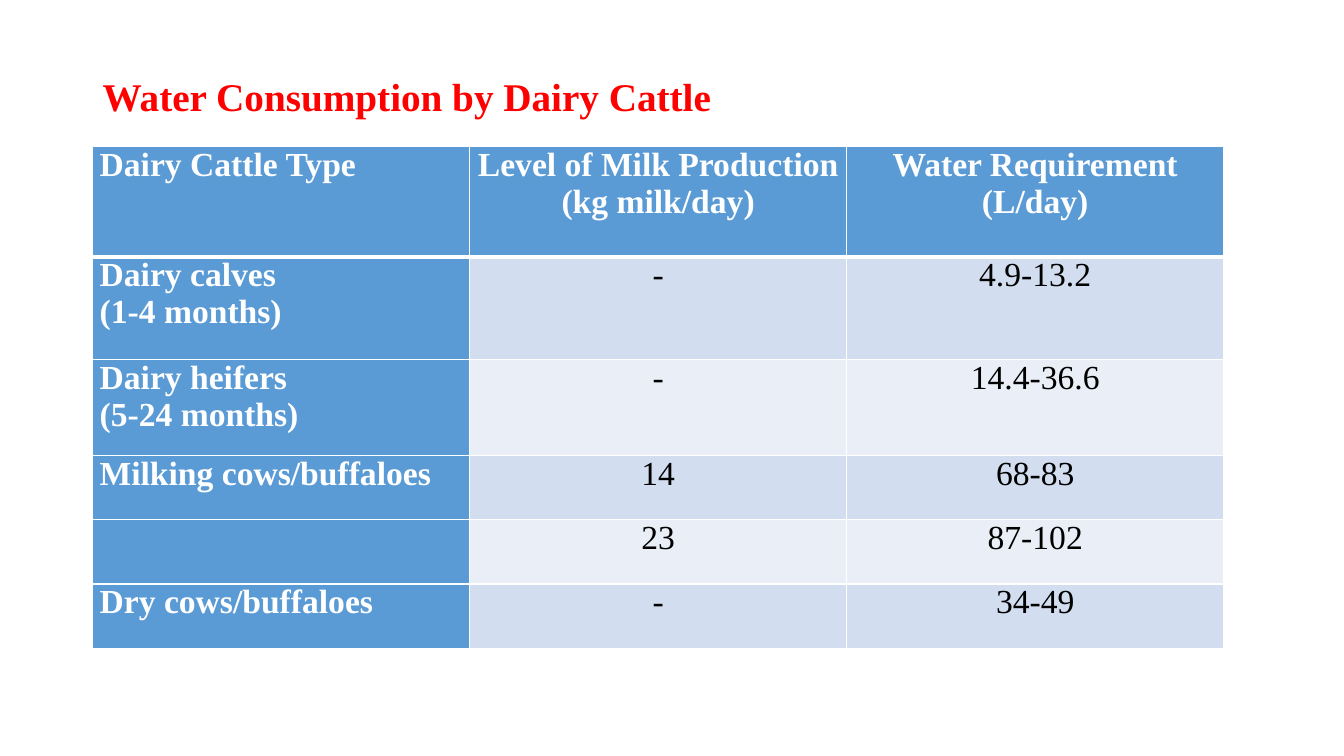
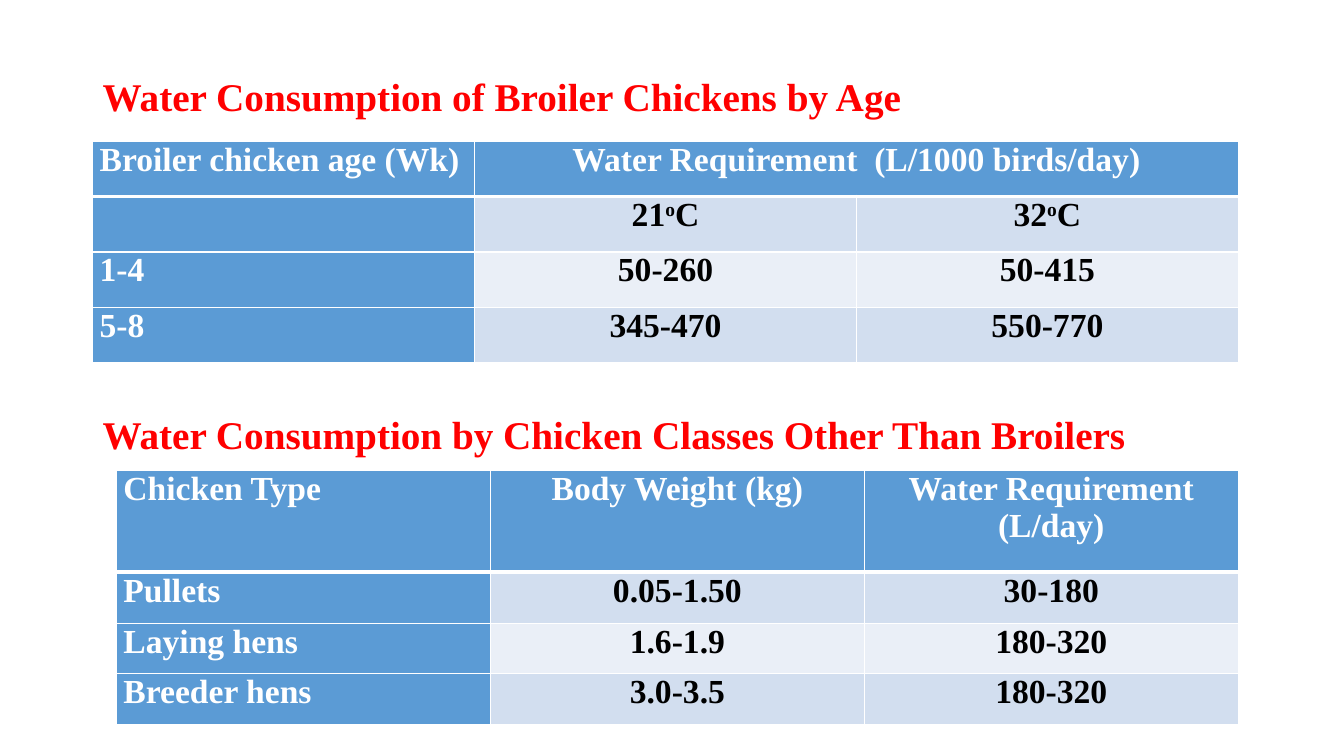
"""Build two slides of tables on the water needs of livestock."""
from dataclasses import dataclass

import lxml.etree
import pptx
import pptx.dml.color
import pptx.enum.text
import pptx.oxml.ns
import pptx.presentation
import pptx.slide
import pptx.text.text
import pptx.util

Pt = pptx.util.Pt
Align = pptx.enum.text.PP_ALIGN


@dataclass(frozen=True)
class Theme:
    """Colours, type and line sizes of the deck."""
    font: str = "Times New Roman"
    red: str = "FF0000"
    blue: str = "5B9BD5"
    bands: tuple[str, str] = ("D2DEEF", "EAEFF7")
    white: str = "FFFFFF"
    black: str = "000000"
    head: float = 28
    body: float = 24
    thin: float = 1
    thick: float = 3


@dataclass(frozen=True)
class Grid:
    """A table with a header row and a header column."""
    left: float
    top: float
    width: float
    heights: tuple[float, ...]
    rows: tuple[tuple[str, ...], ...]
    bold: bool = True
    merge: bool = False


@dataclass(frozen=True)
class Part:
    """A red heading with the table below it."""
    text: str
    top: float
    grid: Grid


THEME = Theme()
LEFT, WIDTH, TALL = 66.2, 869, 40

PAGES = (
    (
        Part("Water Consumption by Dairy Cattle", 48, Grid(
            66.2, 104.4, 269.3, (79, 73.2, 68.6, 46, 46, 46), (
                ("Dairy Cattle Type", "Level of Milk Production (kg milk/day)",
                 "Water Requirement\n(L/day)"),
                ("Dairy calves\n(1-4 months)", "-", "4.9-13.2"),
                ("Dairy heifers\n(5-24 months)", "-", "14.4-36.6"),
                ("Milking cows/buffaloes", "14", "68-83"),
                ("", "23", "87-102"),
                ("Dry cows/buffaloes", "-", "34-49"),
            ), bold=False)),
    ),
    (
        Part("Water Consumption of Broiler Chickens by Age", 48, Grid(
            66.2, 100.8, 272.8, (39.6,) * 4, (
                ("Broiler chicken age (Wk)", "Water Requirement  (L/1000 birds/day)", ""),
                ("", "21^o^C", "32^o^C"),
                ("1-4", "50-260", "50-415"),
                ("5-8", "345-470", "550-770"),
            ), merge=True)),
        Part("Water Consumption by Chicken Classes Other Than Broilers", 289.5, Grid(
            83.2, 336.2, 267.1, (72.6, 36.3, 36.3, 36.3), (
                ("Chicken Type", "Body Weight (kg)", "Water Requirement\n(L/day)"),
                ("Pullets", "0.05-1.50", "30-180"),
                ("Laying hens", "1.6-1.9", "180-320"),
                ("Breeder hens", "3.0-3.5", "180-320"),
            ))),
    ),
)


def shade(code: str) -> pptx.dml.color.RGBColor:
    """Turn a hex code into a colour."""
    return pptx.dml.color.RGBColor.from_string(code)


def write(frame: pptx.text.text.TextFrame, text: str, *, size: float, color: str,
          bold: bool, align: Align) -> None:
    """Write lines of text, raising what stands between carets."""
    frame.word_wrap = True
    for row, line in enumerate(text.split("\n")):
        para = frame.add_paragraph() if row else frame.paragraphs[0]
        para.alignment = align
        for spot, piece in enumerate(line.split("^")):
            if not piece:
                continue
            run = para.add_run()
            run.text = piece
            font = run.font
            font.name, font.size, font.bold = THEME.font, Pt(size), bold
            font.color.rgb = shade(color)
            if spot % 2:
                run._r.get_or_add_rPr().set("baseline", "30000")


def edge(cell: object, side: str, width: float) -> None:
    """Draw one white border of a cell."""
    name = pptx.oxml.ns.qn
    line = lxml.etree.SubElement(cell._tc.get_or_add_tcPr(), name(f"a:ln{side}"),
                                 w=str(int(Pt(width))))
    fill = lxml.etree.SubElement(line, name("a:solidFill"))
    lxml.etree.SubElement(fill, name("a:srgbClr"), val=THEME.white)


def draw(slide: pptx.slide.Slide, grid: Grid) -> None:
    """Add a table with its bands and borders."""
    count = len(grid.rows[0])
    table = slide.shapes.add_table(
        len(grid.rows), count, Pt(grid.left), Pt(grid.top),
        Pt(grid.width * count), Pt(sum(grid.heights))).table
    table.first_row = table.horz_banding = False
    for column in table.columns:
        column.width = Pt(grid.width)
    for row, (height, texts) in enumerate(zip(grid.heights, grid.rows)):
        table.rows[row].height = Pt(height)
        for col, text in enumerate(texts):
            cell = table.cell(row, col)
            cell.margin_left = cell.margin_right = Pt(5)
            cell.margin_top = cell.margin_bottom = Pt(0)
            for side, bound in (("L", False), ("R", False), ("T", row == 1), ("B", row == 0)):
                edge(cell, side, THEME.thick if bound else THEME.thin)
            head = row == 0 or col == 0
            cell.fill.solid()
            cell.fill.fore_color.rgb = shade(THEME.blue if head else THEME.bands[(row - 1) % 2])
            write(cell.text_frame, text, size=THEME.body,
                  color=THEME.white if head else THEME.black, bold=head or grid.bold,
                  align=Align.CENTER if col else Align.JUSTIFY)
    if grid.merge:
        table.cell(0, 1).merge(table.cell(0, count - 1))


def label(slide: pptx.slide.Slide, part: Part, first: bool) -> None:
    """Set a heading, the first one in the title."""
    place = Pt(LEFT), Pt(part.top), Pt(WIDTH), Pt(TALL)
    if first:
        shape = slide.shapes.title
        shape.left, shape.top, shape.width, shape.height = place
    else:
        shape = slide.shapes.add_textbox(*place)
    frame = shape.text_frame
    frame.auto_size = pptx.enum.text.MSO_AUTO_SIZE.NONE
    frame.vertical_anchor = pptx.enum.text.MSO_ANCHOR.TOP
    write(frame, part.text, size=THEME.head, color=THEME.red, bold=True, align=Align.JUSTIFY)


def main() -> None:
    """Build and save the deck."""
    deck = pptx.Presentation()
    deck.slide_width, deck.slide_height = Pt(960), Pt(540)
    for parts in PAGES:
        slide = deck.slides.add_slide(deck.slide_layouts[5])
        for spot, part in enumerate(parts):
            label(slide, part, spot == 0)
            draw(slide, part.grid)
    deck.save("out.pptx")


if __name__ == "__main__":
    main()
